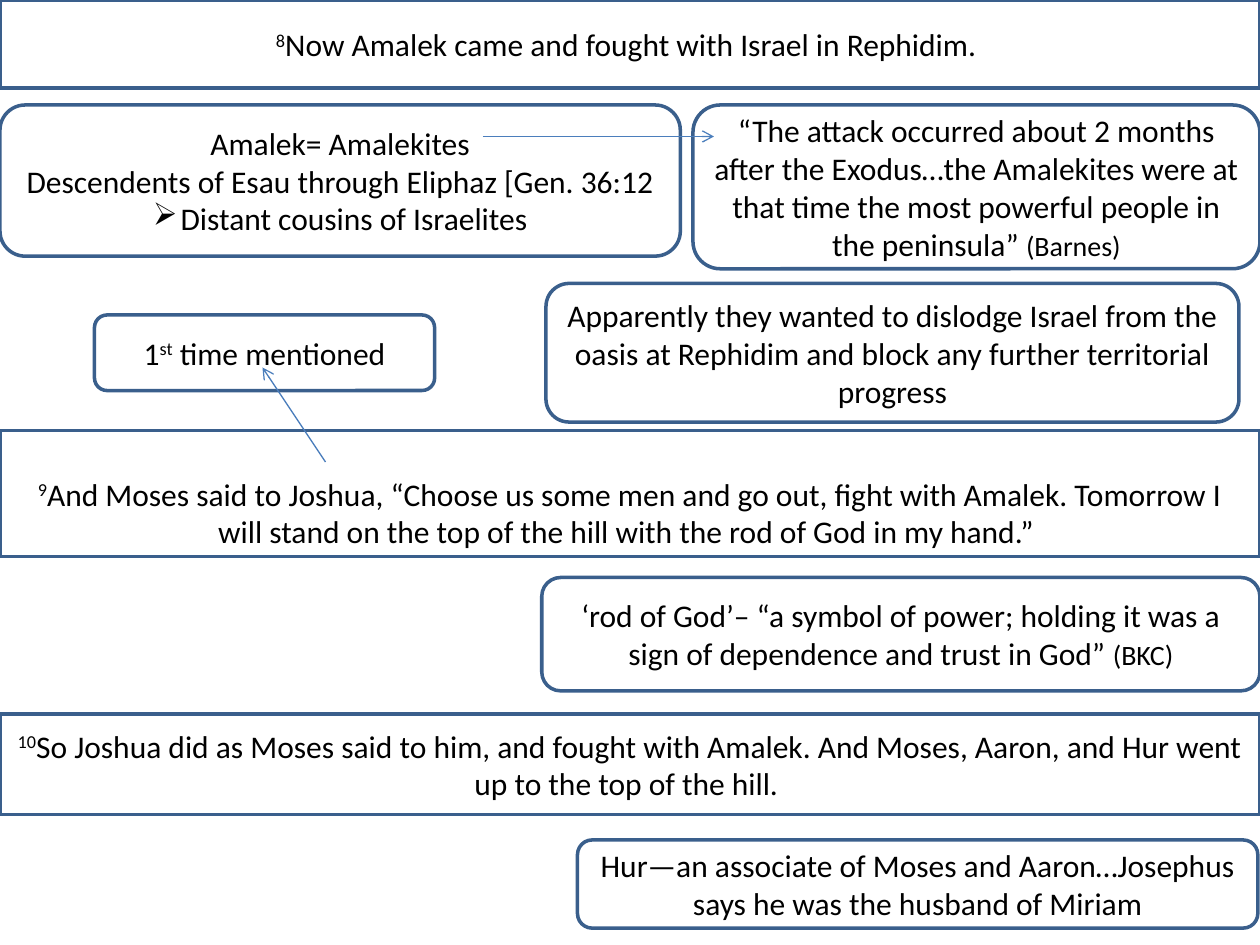
from lxml.etree import SubElement
from pptx import Presentation
from pptx.dml.color import RGBColor
from pptx.enum.shapes import MSO_CONNECTOR, MSO_SHAPE
from pptx.enum.text import MSO_ANCHOR, PP_ALIGN
from pptx.oxml.ns import qn
from pptx.util import Inches, Pt

COLUMNS, ROWS = 120, 90
WIDTH, HEIGHT = Inches(10), Inches(7.5)
COLORS = {"paper": "FFFFFF", "border": "3A5F8C", "arrow": "4B7EBC", "text": "000000"}
FONT = {"name": "Calibri", "size": Pt(18)}
STYLES = {
    "body": FONT,
    "raised": FONT,
    "source": {**FONT, "size": Pt(16)},
}
BULLET = "➢"

VERSES = [
    ((0, 0, 120, 8.4), "8", "Now Amalek came and fought with Israel in Rephidim. ", MSO_ANCHOR.MIDDLE),
    ((0, 41, 120, 12), "9",
     "And Moses said to Joshua, “Choose us some men and go out, fight with Amalek. "
     "Tomorrow I will stand on the top of the hill with the rod of God in my hand.” ",
     MSO_ANCHOR.BOTTOM),
    ((0, 68, 120, 9.6), "10",
     "So Joshua did as Moses said to him, and fought with Amalek. "
     "And Moses, Aaron, and Hur went up to the top of the hill. ", MSO_ANCHOR.MIDDLE),
]

NOTES = [
    ((0, 10, 64.8, 14.4), [
        [("Amalek= Amalekites", "body")],
        [("Descendents of Esau through Eliphaz [Gen. 36:12", "body")],
        [(BULLET, "bullet"), ("Distant cousins of Israelites", "body")],
    ]),
    ((52, 27, 66, 13.2), [
        [("Apparently they wanted to dislodge Israel from the oasis at Rephidim "
          "and block any further territorial progress", "body")],
    ]),
    ((9, 30, 32.4, 7.2), [
        [("1", "body"), ("st", "raised"), (" time mentioned", "body")],
    ]),
    ((51.6, 55, 68.4, 10.8), [
        [("‘rod of God’– “a symbol of power; holding it was a sign of dependence "
          "and trust in God” ", "body"), ("(BKC)", "source")],
    ]),
    ((55, 80, 64.8, 8.4), [
        [("Hur—an associate of Moses and Aaron…Josephus says he was the husband of Miriam", "body")],
    ]),
    ((66, 10, 54, 15.6), [
        [("“The attack occurred about 2 months after the Exodus…the Amalekites were "
          "at that time the most powerful people in the peninsula” ", "body"),
         ("(Barnes)", "source")],
    ]),
]

ARROWS = [((31, 44), (25, 35)), ((46, 13), (68, 13))]


def color(name):
    """Return the named colour."""
    return RGBColor.from_string(COLORS[name])


def to_lengths(*cells):
    """Turn alternating column and row counts into slide lengths."""
    units = (WIDTH / COLUMNS, HEIGHT / ROWS)
    return [round(cell * units[index % 2]) for index, cell in enumerate(cells)]


def add_bullet(paragraph, character):
    """Give a paragraph a hanging bullet."""
    properties = paragraph._p.get_or_add_pPr()
    for name, value in {"marL": Inches(0.22), "indent": -Inches(0.22)}.items():
        properties.set(name, str(value))
    SubElement(properties, qn("a:buChar"), char=character)


def add_run(paragraph, text, style):
    """Append text in one of the named styles."""
    run = paragraph.add_run()
    run.text = text
    for name, value in STYLES[style].items():
        setattr(run.font, name, value)
    run.font.color.rgb = color("text")
    if style == "raised":
        run._r.get_or_add_rPr().set("baseline", "30000")


def add_panel(slide, box, kind, paragraphs, anchor=MSO_ANCHOR.MIDDLE):
    """Place an outlined panel of centred text in the given box."""
    shape = slide.shapes.add_shape(kind, *to_lengths(*box))
    shape.shadow.inherit = False
    shape.fill.solid()
    shape.fill.fore_color.rgb = color("paper")
    shape.line.color.rgb = color("border")
    shape.line.width = Pt(2)
    frame = shape.text_frame
    for name, value in {"word_wrap": True, "vertical_anchor": anchor}.items():
        setattr(frame, name, value)
    for index, pieces in enumerate(paragraphs):
        paragraph = frame.add_paragraph() if index else frame.paragraphs[0]
        paragraph.alignment = PP_ALIGN.CENTER
        for text, style in pieces:
            if style == "bullet":
                add_bullet(paragraph, text)
            else:
                add_run(paragraph, text, style)


def add_verse(slide, box, number, text, anchor):
    """Place a full-width verse with its raised number."""
    add_panel(slide, box, MSO_SHAPE.RECTANGLE, [[(number, "raised"), (text, "body")]], anchor)


def add_note(slide, box, paragraphs):
    """Place a rounded commentary note."""
    add_panel(slide, box, MSO_SHAPE.ROUNDED_RECTANGLE, paragraphs)


def add_arrow(slide, start, end):
    """Draw a thin open arrow between two grid points."""
    connector = slide.shapes.add_connector(MSO_CONNECTOR.STRAIGHT, *to_lengths(*start, *end))
    connector.line.color.rgb = color("arrow")
    connector.line.width = Pt(0.75)
    SubElement(connector.line._get_or_add_ln(), qn("a:tailEnd"), type="arrow")
    SubElement(connector._element.spPr, qn("a:effectLst"))


def main():
    """Build and save the slide."""
    presentation = Presentation()
    presentation.slide_width, presentation.slide_height = WIDTH, HEIGHT
    slide = presentation.slides.add_slide(presentation.slide_layouts[6])
    for add_part, parts in ((add_verse, VERSES), (add_note, NOTES), (add_arrow, ARROWS)):
        for part in parts:
            add_part(slide, *part)
    presentation.save("out.pptx")


if __name__ == "__main__":
    main()
